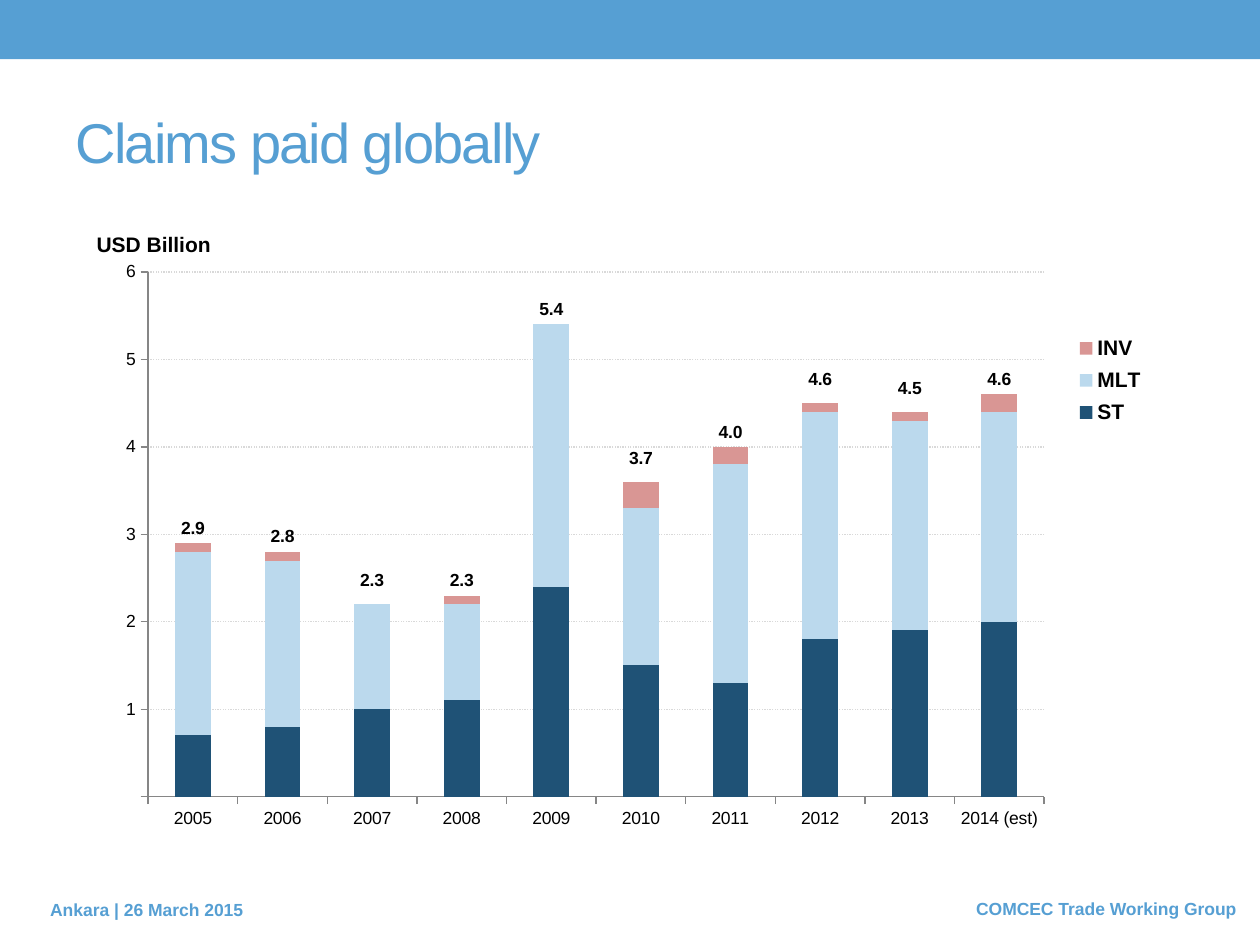
from pptx import Presentation
from pptx.chart.data import CategoryChartData
from pptx.dml.color import RGBColor
from pptx.enum.chart import XL_CHART_TYPE as Kind, XL_LABEL_POSITION as Spot
from pptx.enum.chart import XL_LEGEND_POSITION as Side, XL_MARKER_STYLE as Mark
from pptx.enum.chart import XL_TICK_MARK as Tick
from pptx.enum.dml import MSO_LINE
from pptx.enum.shapes import MSO_SHAPE
from pptx.enum.text import MSO_ANCHOR, PP_ALIGN
from pptx.oxml import parse_xml
from pptx.oxml.ns import nsdecls, qn
from pptx.util import Inches, Pt

BLUE = RGBColor(0x56, 0x9F, 0xD3)
NAVY = RGBColor(0x1F, 0x52, 0x76)
PALE = RGBColor(0xBB, 0xD9, 0xED)
ROSE = RGBColor(0xD9, 0x96, 0x94)
BLACK = RGBColor(0, 0, 0)
GRAY = RGBColor(0x86, 0x86, 0x86)
LIGHT = RGBColor(0xD9, 0xD9, 0xD9)
NS = nsdecls("c")


def add_text(text, left, top, width, height, size, bold, align):
    box = slide.shapes.add_textbox(Inches(left), Inches(top), Inches(width), Inches(height))
    frame = box.text_frame
    frame.word_wrap = True
    frame.vertical_anchor = MSO_ANCHOR.MIDDLE
    frame.text = text
    para = frame.paragraphs[0]
    para.alignment = align
    font = para.runs[0].font
    font.name, font.size, font.bold = "Arial", Pt(size), bold
    font.color.rgb = BLUE
    return font


def set_layout(parent, index, inner=False, **parts):
    """Give a chart part a fixed place, in fractions of the chart's size."""
    for old in parent.findall(qn("c:layout")):
        parent.remove(old)
    target = '<c:layoutTarget val="inner"/>' if inner else ""
    modes = "".join(f'<c:{k}Mode val="edge"/>' for k in parts if k in "xy")
    sizes = "".join(f'<c:{k} val="{v}"/>' for k, v in parts.items())
    parent.insert(index, parse_xml(
        f"<c:layout {NS}><c:manualLayout>{target}{modes}{sizes}</c:manualLayout></c:layout>"))


prs = Presentation()
prs.slide_width, prs.slide_height = Inches(10), Inches(7.5)
slide = prs.slides.add_slide(prs.slide_layouts[6])

band = slide.shapes.add_shape(MSO_SHAPE.RECTANGLE, 0, 0, Inches(10), Inches(0.47))
band.shadow.inherit = False
band.fill.solid()
band.fill.fore_color.rgb = BLUE
band.line.fill.background()

title = add_text("Claims paid globally", 0.5, 0.58, 9, 1.08, 32, False, PP_ALIGN.LEFT)
title._element.set("spc", "-100")

# Chart: stacked claims, with the totals as labels of an unseen line
data = CategoryChartData()
data.categories = [str(year) for year in range(2005, 2014)] + ["2014 (est)"]
data.add_series("ST", [700, 800, 1000, 1100, 2400, 1500, 1300, 1800, 1900, 2000])
data.add_series("MLT", [2100, 1900, 1200, 1100, 3000, 1800, 2500, 2600, 2400, 2400])
data.add_series("INV", [100, 100, 0, 100, 0, 300, 200, 100, 100, 200])
data.add_series("Series 4", [2900, 2800, 2300, 2300, 5400, 3700, 4000, 4600, 4500, 4600])
chart = slide.shapes.add_chart(Kind.COLUMN_STACKED, Inches(0.59), Inches(1.76),
                               Inches(8.61), Inches(4.94), data).chart
chart.has_title = False
chart.font.name, chart.font.size = "Arial", Pt(18)
chart.font.color.rgb = BLACK

bars = chart.plots[0]
bars.gap_width, bars.overlap = 150, 100
bars.vary_by_categories = False
for series, color in zip(bars.series, (NAVY, PALE, ROSE)):
    series.format.fill.solid()
    series.format.fill.fore_color.rgb = color

years, value = chart.category_axis, chart.value_axis
for axis in (years, value):
    axis.major_tick_mark, axis.minor_tick_mark = Tick.OUTSIDE, Tick.NONE
    axis.tick_labels.font.size = Pt(10)
    axis.format.line.color.rgb = GRAY
    axis.format.line.width = Pt(0.75)
value.minimum_scale, value.maximum_scale, value.major_unit = 0, 6000, 1000
value.tick_labels.number_format = "#,###,"
value.tick_labels.number_format_is_linked = False
value.has_major_gridlines = True
grid = value.major_gridlines.format.line
grid.color.rgb, grid.width, grid.dash_style = LIGHT, Pt(0.75), MSO_LINE.ROUND_DOT

label = value.axis_title
label.text_frame.text = "USD Billion"
font = label.text_frame.paragraphs[0].runs[0].font
font.name, font.size, font.bold = "Arial", Pt(12), True
label.text_frame._txBody.bodyPr.set("rot", "0")
set_layout(label._element, 1, x=0.017, y=0.01)

chart.has_legend = True
legend = chart.legend
legend.position, legend.include_in_layout = Side.RIGHT, False
legend.font.size, legend.font.bold = Pt(12), True
legend._element.insert(1, parse_xml(
    f'<c:legendEntry {NS}><c:idx val="3"/><c:delete val="1"/></c:legendEntry>'))
set_layout(legend._element, 2, x=0.91, y=0.17, w=0.09, h=0.17)

# Move the totals to a line on hidden second axes
area = chart._chartSpace.chart.plotArea
set_layout(area, 0, inner=True, x=0.068, y=0.081, w=0.826, h=0.843)
line = parse_xml(f'<c:lineChart {NS}><c:grouping val="standard"/><c:varyColors val="0"/>'
                 '<c:marker val="1"/><c:axId val="5001"/><c:axId val="5002"/></c:lineChart>')
bar = area.find(qn("c:barChart"))
ser = bar.findall(qn("c:ser"))[3]
for flag in ser.findall(qn("c:invertIfNegative")):
    ser.remove(flag)
line.insert(2, ser)
bar.addnext(line)
spot = area.findall(qn("c:valAx"))[-1]
for tag, own, other, place, limits, cross in (
        ("valAx", 5002, 5001, "r", '<c:max val="6000"/><c:min val="0"/>', "max"),
        ("catAx", 5001, 5002, "b", "", "autoZero")):
    spot.addnext(parse_xml(
        f'<c:{tag} {NS}><c:axId val="{own}"/>'
        f'<c:scaling><c:orientation val="minMax"/>{limits}</c:scaling>'
        f'<c:delete val="1"/><c:axPos val="{place}"/>'
        f'<c:crossAx val="{other}"/><c:crosses val="{cross}"/></c:{tag}>'))

total = chart.plots[1].series[0]
total.smooth = False
total.format.line.fill.background()
total.marker.style = Mark.NONE
labels = total.data_labels
labels.show_value, labels.position = True, Spot.ABOVE
labels.number_format, labels.number_format_is_linked = "#,###.0,", False
labels.font.size, labels.font.bold = Pt(10), True
labels.font.color.rgb = BLACK

add_text("Ankara | 26 March 2015", 0.3, 7.04, 3.17, 0.36, 10, True, PP_ALIGN.LEFT)
add_text("COMCEC Trade Working Group", 4.16, 7.03, 5.75, 0.36, 10, True, PP_ALIGN.RIGHT)

prs.save("out.pptx")
